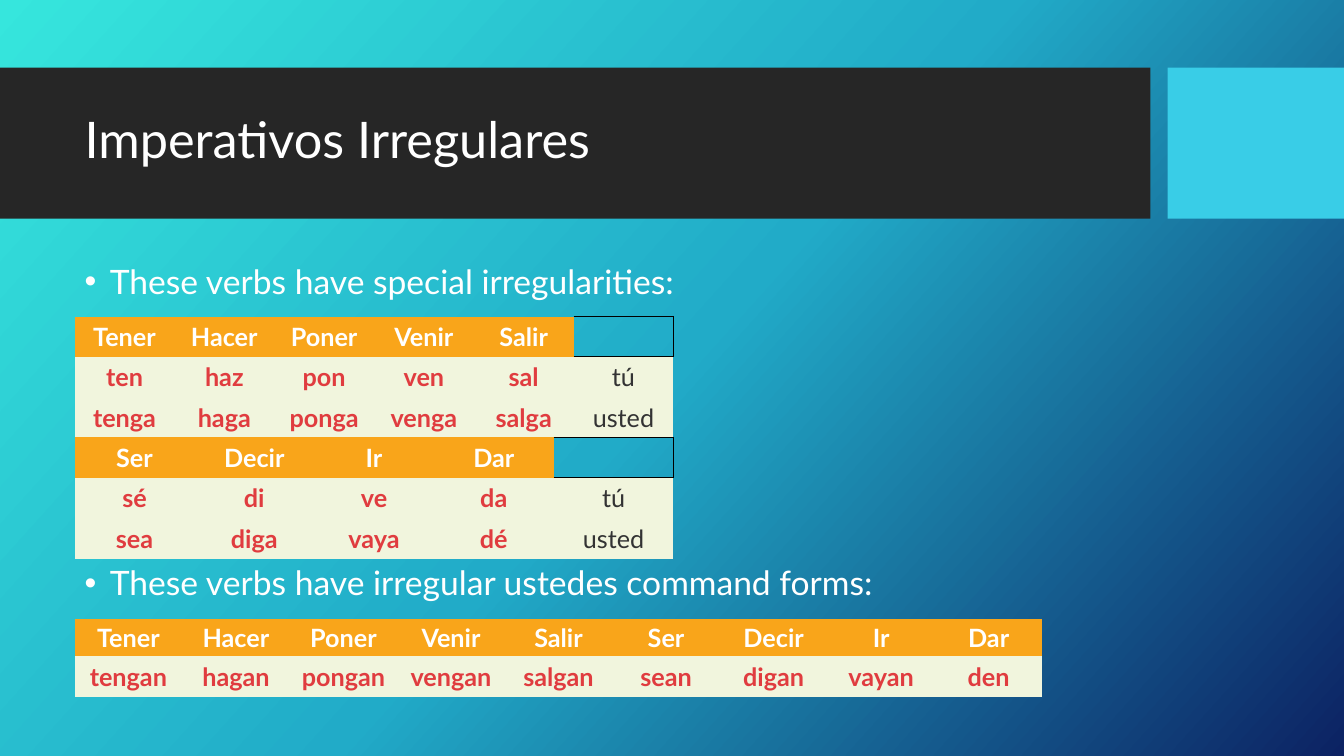
from copy import deepcopy

from lxml.etree import SubElement
from pptx import Presentation
from pptx.dml.color import RGBColor
from pptx.enum.shapes import MSO_SHAPE as Preset
from pptx.enum.text import MSO_ANCHOR as Anchor, PP_ALIGN as Align
from pptx.oxml.ns import qn
from pptx.util import Inches, Pt

FONT = "Lato"
NO_STYLE = "{2D5ABB26-0587-4C30-8999-92F81FD0307C}"
LEFT = 0.74
COLORS = {
    "band": "262626", "accent": "39CDE7", "white": "FFFFFF", "black": "000000",
    "header": "F9A51A", "body": "F1F5DD", "form": "E03C3F", "pronoun": "333333",
}
BACKGROUND = [(0, "36E6DD"), (0.5, "21ABC8"), (1, "0C2263")]
PRONOUNS = ("tú", "usted")

TU_USTED_FIRST = [
    ["Tener", "Hacer", "Poner", "Venir", "Salir", ""],
    ["ten", "haz", "pon", "ven", "sal", "tú"],
    ["tenga", "haga", "ponga", "venga", "salga", "usted"],
]
TU_USTED_SECOND = [
    ["Ser", "Decir", "Ir", "Dar", ""],
    ["sé", "di", "ve", "da", "tú"],
    ["sea", "diga", "vaya", "dé", "usted"],
]
USTEDES = [
    ["Tener", "Hacer", "Poner", "Venir", "Salir", "Ser", "Decir", "Ir", "Dar"],
    ["tengan", "hagan", "pongan", "vengan", "salgan", "sean", "digan", "vayan", "den"],
]


def color(name):
    return RGBColor.from_string(COLORS[name])


def add_run(paragraph, text, size, color_name, bold=False):
    run = paragraph.add_run()
    run.text = text
    run.font.name = FONT
    run.font.size = Pt(size)
    run.font.bold = bold
    run.font.color.rgb = color(color_name)


def set_background(slide):
    fill = slide.background.fill
    fill.gradient()
    fill.gradient_angle = 318
    stop_list = slide.element.find(".//" + qn("a:gsLst"))
    stop_list.append(deepcopy(stop_list[-1]))
    for stop, (position, value) in zip(fill.gradient_stops, BACKGROUND):
        stop.position = position
        stop.color.rgb = RGBColor.from_string(value)


def add_band(slide, left, width, color_name):
    band = slide.shapes.add_shape(
        Preset.RECTANGLE, Inches(left), Inches(0.67), Inches(width), Inches(1.5))
    band.shadow.inherit = False
    band.fill.solid()
    band.fill.fore_color.rgb = color(color_name)
    band.line.fill.background()


def set_title(slide, text):
    title = slide.shapes.title
    title.left, title.top = Inches(LEFT), Inches(0.82)
    title.width, title.height = Inches(10.51), Inches(1.18)
    title.text_frame.vertical_anchor = Anchor.MIDDLE
    paragraph = title.text_frame.paragraphs[0]
    paragraph.alignment = Align.LEFT
    paragraph.line_spacing = 0.9
    add_run(paragraph, text, 36, "white")
    # Bring the title in front of the bands
    title.element.getparent().append(title.element)


def add_bullet(slide, top, text):
    box = slide.shapes.add_textbox(
        Inches(LEFT), Inches(top), Inches(11.91), Inches(0.46))
    box.text_frame.word_wrap = True
    paragraph = box.text_frame.paragraphs[0]
    paragraph.line_spacing = 0.9
    properties = paragraph._p.get_or_add_pPr()
    properties.set("marL", str(Inches(0.25)))
    properties.set("indent", str(-Inches(0.25)))
    SubElement(properties, qn("a:buFont"), typeface="Arial")
    SubElement(properties, qn("a:buChar"), char="•")
    add_run(paragraph, text, 24, "white")


def outline_empty_cell(cell):
    properties = cell._tc.get_or_add_tcPr()
    for side in ("lnR", "lnT", "lnB"):
        line = SubElement(properties, qn(f"a:{side}"), w=str(Pt(1)))
        fill = SubElement(line, qn("a:solidFill"))
        SubElement(fill, qn("a:srgbClr"), val=COLORS["black"])
    cell.fill.background()


def fill_cell(cell, text, is_header):
    if not text:
        outline_empty_cell(cell)
        return
    cell.vertical_anchor = Anchor.MIDDLE
    if is_header:
        cell.margin_left = cell.margin_right = Inches(0.07)
        cell.margin_top = cell.margin_bottom = Inches(0.03)
    cell.fill.solid()
    cell.fill.fore_color.rgb = color("header" if is_header else "body")
    is_pronoun = text in PRONOUNS
    text_color = "white" if is_header else "pronoun" if is_pronoun else "form"
    paragraph = cell.text_frame.paragraphs[0]
    paragraph.alignment = Align.CENTER
    add_run(paragraph, text, 18, text_color, bold=not is_pronoun)


def add_verb_table(slide, top, width, rows, header_height=0.4):
    column_count = len(rows[0])
    height = header_height + 0.4 * (len(rows) - 1)
    frame = slide.shapes.add_table(
        len(rows), column_count,
        Inches(LEFT), Inches(top), Inches(width), Inches(height))
    table = frame.table
    frame.element.find(".//" + qn("a:tableStyleId")).text = NO_STYLE
    for column in table.columns:
        column.width = Inches(width / column_count)
    for row_index, texts in enumerate(rows):
        is_header = row_index == 0
        table.rows[row_index].height = Inches(header_height if is_header else 0.4)
        for column_index, text in enumerate(texts):
            fill_cell(table.cell(row_index, column_index), text, is_header)


def main():
    presentation = Presentation()
    presentation.slide_width = Inches(13.33)
    presentation.slide_height = Inches(7.5)
    slide = presentation.slides.add_slide(presentation.slide_layouts[5])

    # Background and title band
    set_background(slide)
    add_band(slide, 0, 11.41, "band")
    add_band(slide, 11.58, 1.75, "accent")
    set_title(slide, "Imperativos Irregulares")

    # Tú and usted commands
    add_bullet(slide, 2.58, "These verbs have special irregularities:")
    add_verb_table(slide, 3.14, 5.94, TU_USTED_FIRST)
    add_verb_table(slide, 4.34, 5.94, TU_USTED_SECOND)

    # Ustedes commands
    add_bullet(slide, 5.57, "These verbs have irregular ustedes command forms:")
    add_verb_table(slide, 6.14, 9.6, USTEDES, header_height=0.37)

    presentation.save("out.pptx")


if __name__ == "__main__":
    main()
